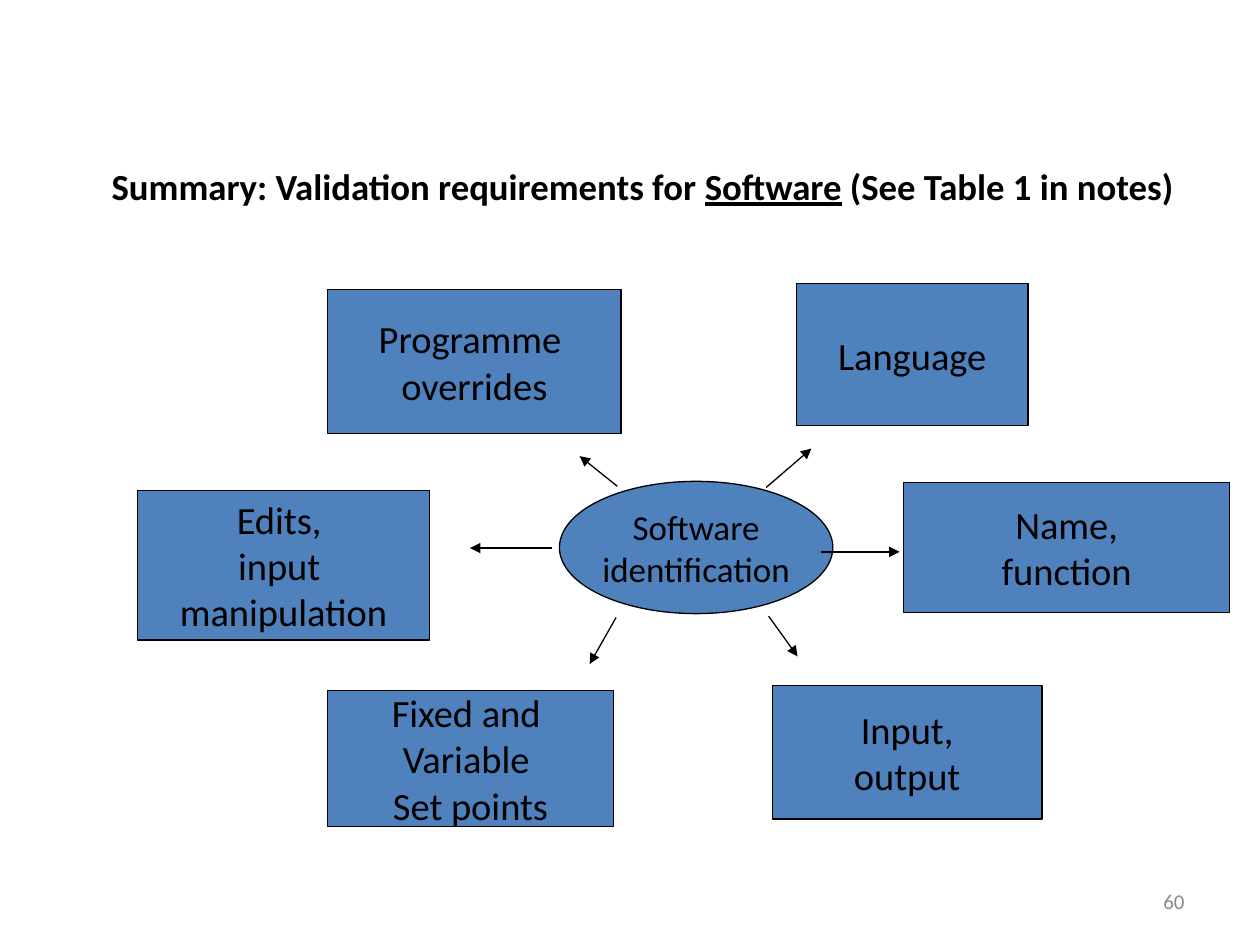
import pptx
import pptx.dml.color
import pptx.enum.shapes
import pptx.enum.text
import pptx.oxml
import pptx.oxml.ns
import pptx.util

Inches = pptx.util.Inches
Pt = pptx.util.Pt
SHAPES = pptx.enum.shapes.MSO_SHAPE
ALIGN = pptx.enum.text.PP_ALIGN
ANCHOR = pptx.enum.text.MSO_ANCHOR

COLORS = {"fill": "4F81BD", "ink": "000000", "number": "8C8C8C"}


def color(name):
    return pptx.dml.color.RGBColor.from_string(COLORS[name])


class SlideBuilder:
    font = "Calibri"
    line_width = Pt(0.75)

    def __init__(self, slide):
        self.slide = slide

    def add_span(self, para, text, size, ink="ink", bold=False, underline=False):
        span = para.add_run()
        span.text = text
        span.font.name = self.font
        span.font.size = Pt(size)
        span.font.bold = bold
        span.font.underline = underline
        span.font.color.rgb = color(ink)

    def add_node(self, kind, place, lines, size):
        box = self.slide.shapes.add_shape(kind, *map(Inches, place))
        box.shadow.inherit = False
        box.fill.solid()
        box.fill.fore_color.rgb = color("fill")
        box.line.color.rgb = color("ink")
        box.line.width = self.line_width
        frame = box.text_frame
        frame.word_wrap = False
        frame.vertical_anchor = ANCHOR.MIDDLE
        for index, line in enumerate(lines):
            para = frame.add_paragraph() if index else frame.paragraphs[0]
            para.alignment = ALIGN.CENTER
            self.add_span(para, line, size)

    def add_arrow(self, start, end):
        arrow = self.slide.shapes.add_connector(
            pptx.enum.shapes.MSO_CONNECTOR.STRAIGHT, *map(Inches, start + end))
        arrow.line.color.rgb = color("ink")
        arrow.line.width = self.line_width
        # Arrowhead at the end, and no theme shadow
        head = pptx.oxml.parse_xml(
            f'<a:tailEnd {pptx.oxml.ns.nsdecls("a")} type="triangle"/>')
        arrow.line._get_or_add_ln().append(head)
        arrow._element.spPr.append(pptx.oxml.parse_xml(
            f'<a:effectLst {pptx.oxml.ns.nsdecls("a")}/>'))

    def add_text(self, place, align, anchor=ANCHOR.TOP):
        box = self.slide.shapes.add_textbox(*map(Inches, place))
        box.text_frame.word_wrap = True
        box.text_frame.vertical_anchor = anchor
        para = box.text_frame.paragraphs[0]
        para.alignment = align
        return para


def main():
    deck = pptx.Presentation()
    deck.slide_width = Inches(10)
    deck.slide_height = Inches(7.5)
    page = SlideBuilder(deck.slides.add_slide(deck.slide_layouts[6]))

    # Central topic
    page.add_node(SHAPES.OVAL, (4.44, 3.82, 2.17, 1.05),
                  ["Software", "identification"], 20)

    # Requirements around it
    requirements = [
        ((2.6, 5.48, 2.27, 1.08), ["Fixed and ", "Variable ", "Set points"]),
        ((1.09, 3.89, 2.32, 1.19), ["Edits, ", "input ", "manipulation"]),
        ((7.17, 3.83, 2.59, 1.03), ["Name,", "function"]),
        ((6.13, 5.44, 2.14, 1.06), ["Input,", "output"]),
        ((2.6, 2.3, 2.33, 1.14), ["Programme ", "overrides"]),
        ((6.32, 2.25, 1.84, 1.13), ["Language"]),
    ]
    for place, lines in requirements:
        page.add_node(SHAPES.RECTANGLE, place, lines, 22)

    # Arrows from the topic outwards
    arrows = [
        ((6.52, 4.38), (7.14, 4.38)),
        ((4.38, 4.35), (3.73, 4.35)),
        ((4.89, 4.9), (4.68, 5.27)),
        ((6.1, 4.89), (6.33, 5.21)),
        ((6.08, 3.87), (6.44, 3.56)),
        ((4.9, 3.86), (4.6, 3.62)),
    ]
    for start, end in arrows:
        page.add_arrow(start, end)

    # Title
    title = page.add_text((0, 1.25, 10.2, 0.45), ALIGN.CENTER)
    page.add_span(title, "Summary: Validation requirements for ", 21, bold=True)
    page.add_span(title, "Software", 21, bold=True, underline=True)
    page.add_span(title, " (See Table 1 in notes)", 21, bold=True)

    # Page number
    number = page.add_text((7.17, 6.95, 2.33, 0.4), ALIGN.RIGHT, ANCHOR.MIDDLE)
    page.add_span(number, "60", 12, ink="number")

    deck.save("out.pptx")


if __name__ == "__main__":
    main()
